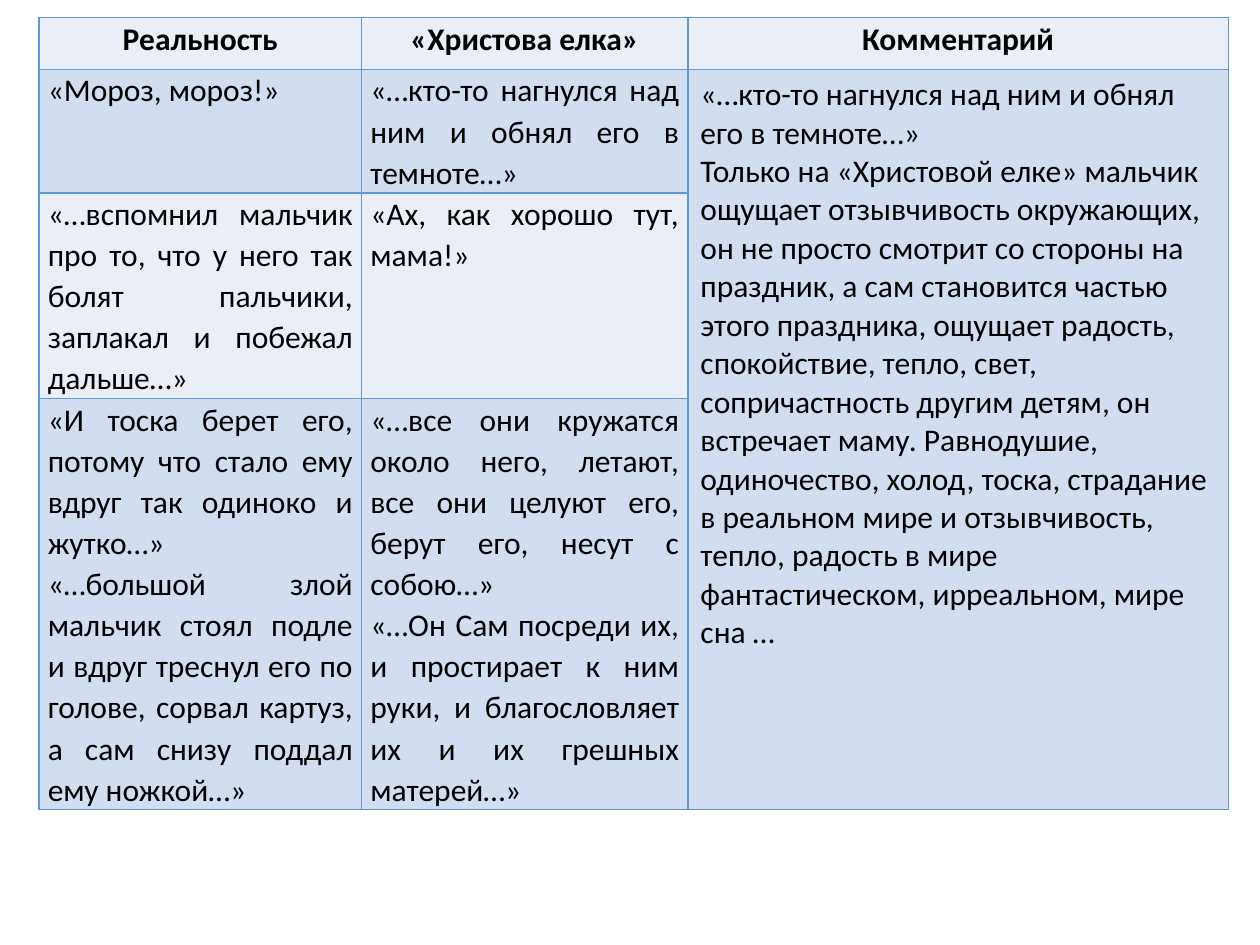
from pptx import Presentation
from pptx.dml.color import RGBColor
from pptx.enum.text import PP_ALIGN
from pptx.oxml import parse_xml
from pptx.oxml.ns import nsdecls
from pptx.util import Inches, Pt

CENTER, JUSTIFY, LEFT = PP_ALIGN.CENTER, PP_ALIGN.JUSTIFY, PP_ALIGN.LEFT
BORDER, LIGHT, DARK, BLACK = "5B9BD5", "EAEFF7", "D2DEEF", "000000"
COLUMN_WIDTHS = (2.56, 2.59, 4.29)
ROW_HEIGHTS = (0.41, 0.98, 1.63, 3.26)
TABLE_BOX = (0.31, 0.14, sum(COLUMN_WIDTHS), sum(ROW_HEIGHTS))

HEADER = {"align": CENTER, "spacing": 1.07, "bold": True, "margins": (0.07, 0)}
QUOTE = {"align": JUSTIFY, "spacing": 1.07, "bold": False, "margins": (0.07, 0)}
COMMENT = {"align": LEFT, "spacing": 1.0, "bold": False, "margins": (0.1, 0.05)}

ROWS = [
    [["Реальность"], ["«Христова елка»"], ["Комментарий"]],
    [
        ["«Мороз, мороз!»"],
        ["«…кто-то нагнулся над ним и обнял его в темноте…»"],
        [
            "«…кто-то нагнулся над ним и обнял его в темноте…»",
            "Только на «Христовой елке» мальчик ощущает отзывчивость окружающих, "
            "он не просто смотрит со стороны на праздник, а сам становится частью "
            "этого праздника, ощущает радость, спокойствие, тепло, свет, "
            "сопричастность другим детям, он встречает маму. Равнодушие, "
            "одиночество, холод, тоска, страдание в реальном мире и отзывчивость, "
            "тепло, радость в мире фантастическом, ирреальном, мире сна …",
        ],
    ],
    [
        ["«…вспомнил мальчик про то, что у него так болят пальчики, "
         "заплакал и побежал дальше…»"],
        ["«Ах, как хорошо тут, мама!»"],
    ],
    [
        [
            "«И тоска берет его, потому что стало ему вдруг так одиноко и жутко…»",
            "«…большой злой мальчик стоял подле и вдруг треснул его по голове, "
            "сорвал картуз, а сам снизу поддал ему ножкой…»",
        ],
        [
            "«…все они кружатся около него, летают, все они целуют его, "
            "берут его, несут с собою…»",
            "«…Он Сам посреди их, и простирает к ним руки, и благословляет их "
            "и их грешных матерей…»",
        ],
    ],
]


def color(value):
    return RGBColor.from_string(value)


def style_cell(cell, fill):
    cell.fill.solid()
    cell.fill.fore_color.rgb = color(fill)
    properties = cell._tc.get_or_add_tcPr()
    for index, side in enumerate(("lnL", "lnR", "lnT", "lnB")):
        properties.insert(index, parse_xml(
            f'<a:{side} {nsdecls("a")} w="{Pt(1)}"><a:solidFill>'
            f'<a:srgbClr val="{BORDER}"/></a:solidFill></a:{side}>'))


def fill_cell(cell, texts, style):
    horizontal, vertical = map(Inches, style["margins"])
    margins = {"margin_left": horizontal, "margin_right": horizontal,
               "margin_top": vertical, "margin_bottom": vertical}
    for name, value in margins.items():
        setattr(cell, name, value)
    frame = cell.text_frame
    for index, text in enumerate(texts):
        para = frame.paragraphs[0] if index == 0 else frame.add_paragraph()
        para.alignment = style["align"]
        para.line_spacing = style["spacing"]
        span = para.add_run()
        span.text = text
        font = {"name": "Calibri", "size": Pt(18), "bold": style["bold"]}
        for name, value in font.items():
            setattr(span.font, name, value)
        span.font.color.rgb = color(BLACK)


def add_comparison_table(page, box):
    table = page.shapes.add_table(
        len(ROW_HEIGHTS), len(COLUMN_WIDTHS), *map(Inches, box)).table
    for column, width in zip(table.columns, COLUMN_WIDTHS):
        column.width = Inches(width)
    for row, height in zip(table.rows, ROW_HEIGHTS):
        row.height = Inches(height)
    for row_index, row in enumerate(table.rows):
        for cell in row.cells:
            style_cell(cell, DARK if row_index % 2 else LIGHT)
    table.cell(1, 2).merge(table.cell(3, 2))
    for row_index, row in enumerate(ROWS):
        for column_index, texts in enumerate(row):
            if row_index == 0:
                style = HEADER
            else:
                style = COMMENT if column_index == 2 else QUOTE
            fill_cell(table.cell(row_index, column_index), texts, style)


def main():
    deck = Presentation()
    deck.slide_width, deck.slide_height = Inches(10), Inches(7.5)
    page = deck.slides.add_slide(deck.slide_layouts[6])
    add_comparison_table(page, TABLE_BOX)
    deck.save("out.pptx")


if __name__ == "__main__":
    main()
